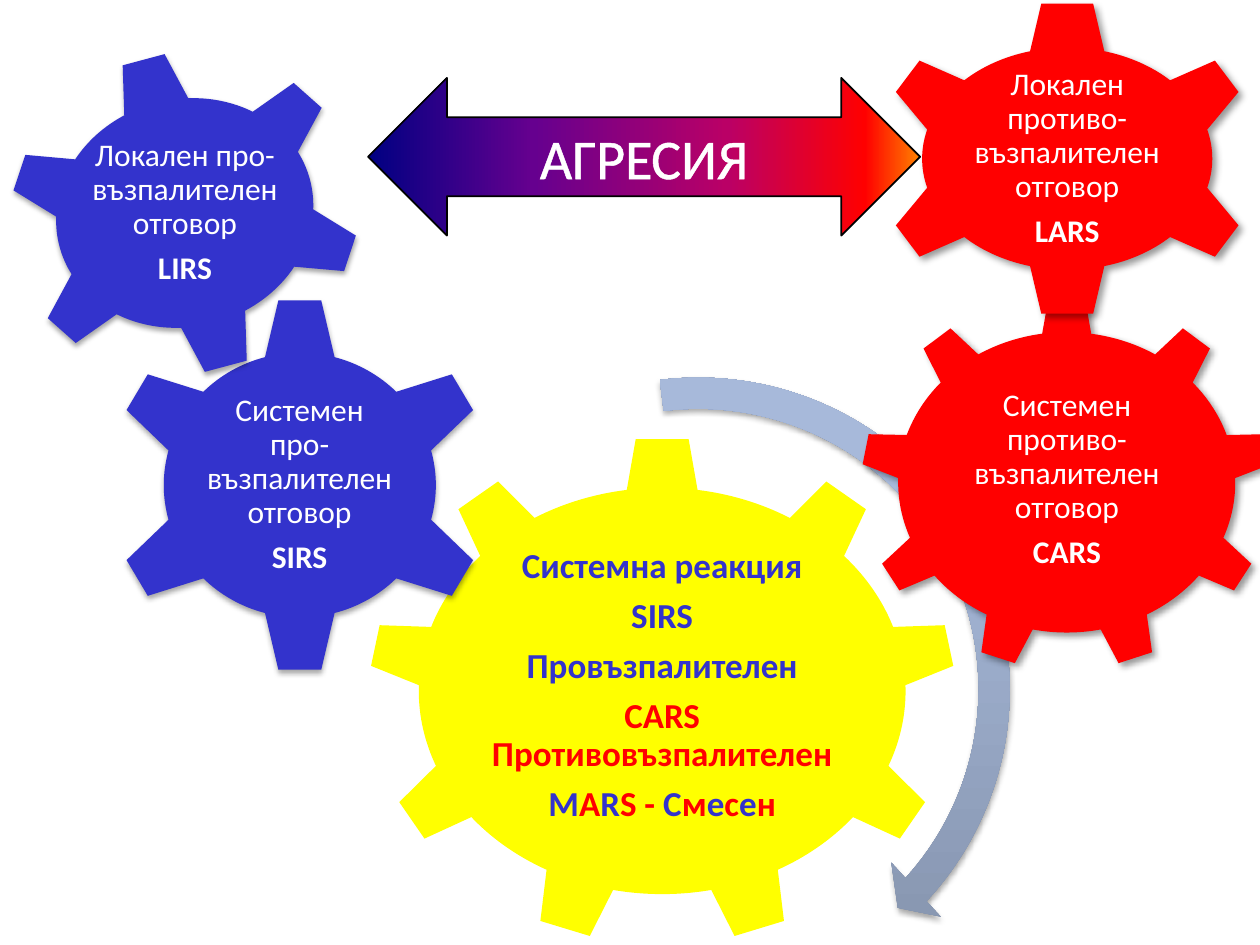
from itertools import cycle

from lxml import etree
from pptx import Presentation
from pptx import util as u
from pptx.dml.color import RGBColor
from pptx.enum import shapes, text
from pptx.oxml import parse_xml
from pptx.oxml.ns import nsdecls, qn

BLUE, RED, YELLOW, WHITE, BLACK = "3333CC", "FF0000", "FFFF00", "FFFFFF", "000000"
GEAR6, GEAR9 = shapes.MSO_SHAPE.GEAR_6, shapes.MSO_SHAPE.GEAR_9
# Shadows: opacity %, blur pt, distance pt, direction in degrees
SOFT_SHADOW = (35, 3.1, 1.8, 90)
SLANTED_SHADOW = (40, 4, 3, 45)


def rgb(value):
    return RGBColor.from_string(value)


class Diagram:
    font = "Calibri"
    inset = u.Cm(0.08)

    def __init__(self, slide):
        self.slide = slide

    def preset(self, kind, box, fill=None, shadow=None, rotation=0):
        shape = self.slide.shapes.add_shape(kind, *map(u.Cm, box))
        shape.rotation = rotation
        shape.line.fill.background()
        if fill:
            shape.fill.solid()
            shape.fill.fore_color.rgb = rgb(fill)
        shape.shadow.inherit = False
        if shadow:
            self.cast_shadow(shape, *shadow)
        return shape

    def cast_shadow(self, shape, opacity, blur, distance, direction):
        effects = shape.element.spPr.find(qn("a:effectLst"))
        effects.append(parse_xml(
            f'<a:outerShdw {nsdecls("a")} blurRad="{u.Pt(blur)}" dist="{u.Pt(distance)}"'
            f' dir="{direction * 60000}" rotWithShape="0"><a:srgbClr val="{BLACK}">'
            f'<a:alpha val="{opacity * 1000}"/></a:srgbClr></a:outerShdw>'))

    def gradient(self, shape, stops, angle):
        """Fill with (percent, colour) stops; angle is clockwise in degrees."""
        shape.fill.gradient()
        shape.fill.gradient_angle = -angle % 360
        stop_list = shape.element.spPr.find(qn("a:gradFill")).find(qn("a:gsLst"))
        for old in list(stop_list):
            stop_list.remove(old)
        for percent, colour in stops:
            stop = etree.SubElement(stop_list, qn("a:gs"), pos=str(percent * 1000))
            etree.SubElement(stop, qn("a:srgbClr"), val=colour)

    def style(self, paragraph, size, bold=False, colour=None):
        paragraph.alignment = text.PP_ALIGN.CENTER
        paragraph.font.name = self.font
        paragraph.font.size = u.Pt(size)
        paragraph.font.bold = bold
        if colour:
            paragraph.font.color.rgb = rgb(colour)

    def label(self, box, lines, size):
        """Write lines of (words, colour, bold); a colour pair alternates by letter."""
        frame = self.slide.shapes.add_textbox(*map(u.Cm, box)).text_frame
        frame.word_wrap = True
        frame.vertical_anchor = text.MSO_ANCHOR.MIDDLE
        frame.margin_left = frame.margin_right = self.inset
        frame.margin_top = frame.margin_bottom = self.inset
        for number, (words, colour, bold) in enumerate(lines):
            paragraph = frame.add_paragraph() if number else frame.paragraphs[0]
            paragraph.line_spacing = 0.9
            paragraph.space_after = u.Pt(0.35 * size)
            if isinstance(colour, str):
                self.style(paragraph, size, bold, colour)
                paragraph.add_run().text = words
                continue
            self.style(paragraph, size, bold)
            for part, shade in zip(words, cycle(colour)):
                run = paragraph.add_run()
                run.text = part
                run.font.color.rgb = rgb(shade)

    def response(self, kind, gear_box, text_box, colour, shadow, name, code, rotation=0):
        self.preset(kind, gear_box, colour, shadow, rotation)
        self.label(text_box, [(name, WHITE, False), (code, WHITE, True)], 18)

    def aggression(self, box, words):
        arrow = self.preset(shapes.MSO_SHAPE.LEFT_RIGHT_ARROW, box)
        self.gradient(arrow, [(0, "000082"), (30, "66008F"), (65, "BA0066"),
                              (90, "FF0000"), (100, "FF8200")], 0)
        arrow.line.color.rgb = rgb(BLACK)
        arrow.line.width = u.Pt(1)
        frame = arrow.text_frame
        frame.word_wrap = False
        frame.vertical_anchor = text.MSO_ANCHOR.MIDDLE
        paragraph = frame.paragraphs[0]
        self.style(paragraph, 32)
        run = paragraph.add_run()
        run.text = words
        run.font.color.rgb = rgb(WHITE)
        outline = parse_xml(
            f'<a:ln {nsdecls("a")} w="{u.Pt(1.45)}"><a:solidFill>'
            f'<a:srgbClr val="{WHITE}"/></a:solidFill></a:ln>')
        run._r.get_or_add_rPr().insert(0, outline)

    def progress(self, box):
        arc = self.preset(shapes.MSO_SHAPE.CIRCULAR_ARROW, box, shadow=SOFT_SHADOW)
        for index, value in enumerate((0.047, 2.99, 25.567, 157.765, 0.055)):
            arc.adjustments[index] = value
        self.gradient(arc, [(0, "818FA8"), (80, "A7B9DA"), (100, "A7BADC")], 270)


def main():
    deck = Presentation()
    deck.slide_width, deck.slide_height = u.Cm(25.4), u.Cm(19.05)
    diagram = Diagram(deck.slides.add_slide(deck.slide_layouts[6]))

    diagram.preset(GEAR9, (7.42, 8.81, 11.86, 10.24), YELLOW)
    diagram.label((9.68, 11.2, 7.34, 5.26), [
        ("Системна реакция", BLUE, True),
        ("SIRS", BLUE, True),
        ("Провъзпалителен", BLUE, True),
        ("CARS Противовъзпалителен", RED, True),
        (("M", "A", "R", "S - ", *"Смесен"), (BLUE, RED), True),
    ], 20)
    diagram.response(GEAR6, (2.16, 5.97, 7.77, 7.62), (4.06, 7.9, 3.96, 3.76),
                     BLUE, SOFT_SHADOW, "Системен про-възпалителен отговор", "SIRS")
    diagram.response(GEAR6, (0.13, 1.02, 7.19, 6.55), (1.75, 2.41, 3.96, 3.76),
                     BLUE, SOFT_SHADOW, "Локален про-възпалителен отговор", "LIRS", 345)
    diagram.progress((7.37, 7.19, 13.41, 13.41))
    diagram.response(GEAR9, (17.35, 5.94, 8.31, 7.57), (18.97, 7.72, 5.08, 3.89),
                     RED, SLANTED_SHADOW, "Системен противо- възпалителен отговор", "CARS")
    diagram.response(GEAR6, (17.63, 0, 7.77, 6.4), (19.43, 1.63, 4.17, 3.15),
                     RED, SLANTED_SHADOW, "Локален противо-възпалителен отговор", "LARS")
    diagram.aggression((7.42, 1.57, 11.13, 3.18), "АГРЕСИЯ")
    deck.save("out.pptx")


if __name__ == "__main__":
    main()
